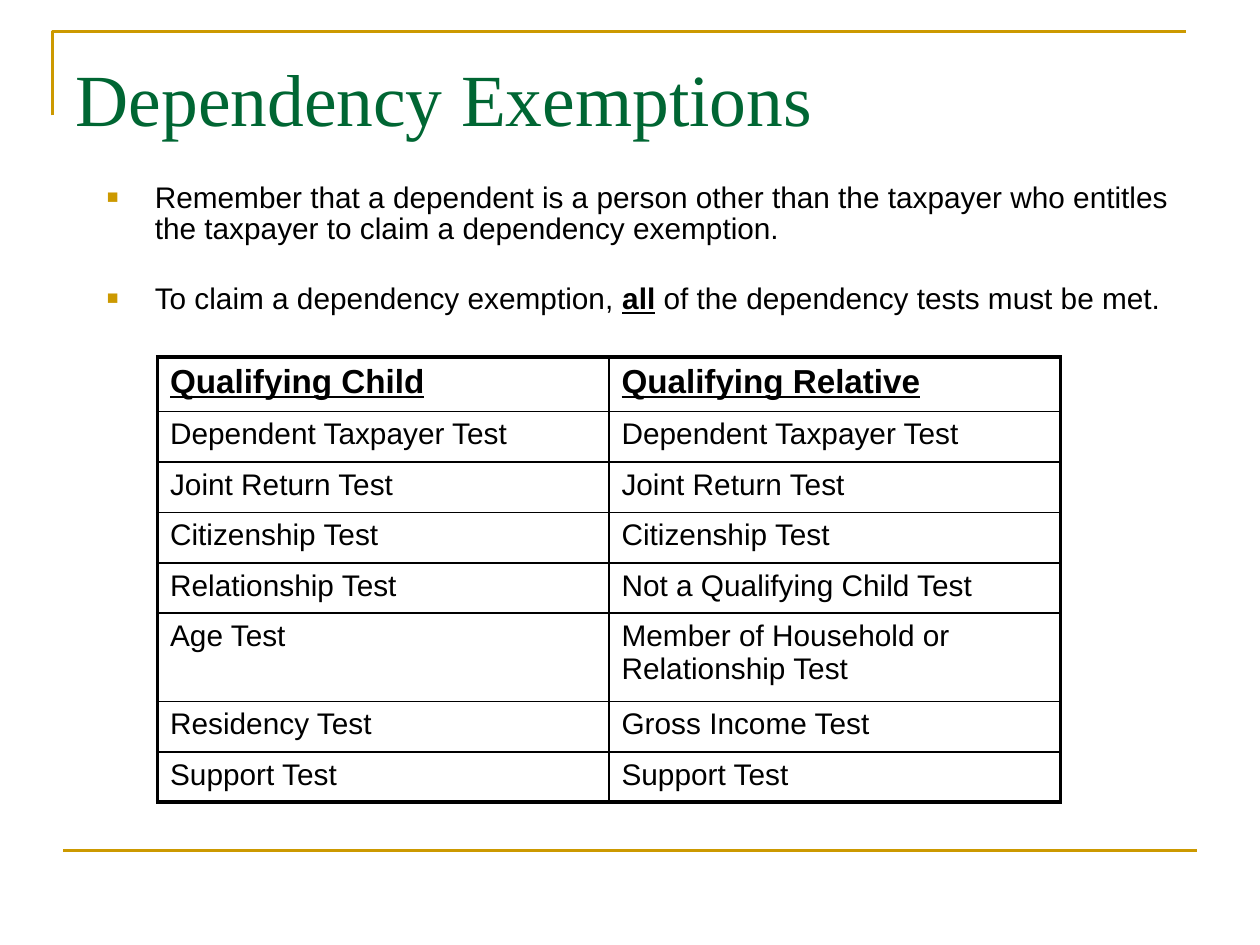
from lxml.etree import SubElement
from pptx import Presentation
from pptx.dml.color import RGBColor
from pptx.enum.shapes import MSO_CONNECTOR
from pptx.enum.text import MSO_ANCHOR
from pptx.oxml.ns import qn
from pptx.util import Inches, Pt

COLUMNS, ROWS = 120, 90  # twelve grid units to the inch
GOLD, GREEN, BLACK = "CC9900", "006633", "000000"
THICK, THIN = 2.25, 1

REMINDERS = [
    [("Remember that a dependent is a person other than the taxpayer who "
      "entitles the taxpayer to claim a dependency exemption.", False)],
    [("To claim a dependency exemption, ", False), ("all", True),
     (" of the dependency tests must be met.", False)],
]
TESTS = [
    ("Qualifying Child", "Qualifying Relative"),
    ("Dependent Taxpayer Test", "Dependent Taxpayer Test"),
    ("Joint Return Test", "Joint Return Test"),
    ("Citizenship Test", "Citizenship Test"),
    ("Relationship Test", "Not a Qualifying Child Test"),
    ("Age Test", "Member of Household or Relationship Test"),
    ("Residency Test", "Gross Income Test"),
    ("Support Test", "Support Test"),
]
TEST_HEIGHTS = [5.2, 4.8, 4.8, 4.8, 4.8, 8.4, 4.8, 4.8]


def rgb(code):
    return RGBColor.from_string(code)


def add_text(paragraph, text, size=17, font="Arial", color=BLACK, strong=False):
    """Append a run; strong means bold and underlined."""
    run = paragraph.add_run()
    run.text = text
    run.font.size, run.font.name = Pt(size), font
    run.font.color.rgb = rgb(color)
    run.font.bold = run.font.underline = strong


def add_bullet(paragraph, color, indent):
    props = paragraph._p.get_or_add_pPr()
    props.set("marL", str(indent))
    props.set("indent", str(-indent))
    SubElement(SubElement(props, qn("a:buClr")), qn("a:srgbClr"), val=color)
    SubElement(props, qn("a:buSzPct"), val="65000")
    SubElement(props, qn("a:buFont"), typeface="Arial")
    SubElement(props, qn("a:buChar"), char="■")


def set_borders(cell, **widths):
    """Draw black borders; the fill must be set afterwards."""
    props = cell._tc.get_or_add_tcPr()
    for side in "LRTB":
        border = SubElement(props, qn(f"a:ln{side}"), w=str(Pt(widths[side])))
        SubElement(SubElement(border, qn("a:solidFill")), qn("a:srgbClr"), val=BLACK)


class SlideBuilder:
    def __init__(self, deck):
        self.slide = deck.slides.add_slide(deck.slide_layouts[5])
        self.shapes = self.slide.shapes
        self.column = deck.slide_width / COLUMNS
        self.row = deck.slide_height / ROWS

    def at(self, columns, rows):
        return round(columns * self.column), round(rows * self.row)

    def style_line(self, line):
        line.color.rgb, line.width = rgb(GOLD), Pt(1.5)

    def bracket(self, *points):
        start, *others = [self.at(*point) for point in points]
        outline = self.shapes.build_freeform(*start)
        outline.add_line_segments(others, close=False)
        corner = outline.convert_to_shape()
        corner.fill.background()
        corner.shadow.inherit = False
        self.style_line(corner.line)

    def rule(self, start, end):
        footer_rule = self.shapes.add_connector(
            MSO_CONNECTOR.STRAIGHT, *self.at(*start), *self.at(*end))
        self.style_line(footer_rule.line)
        SubElement(footer_rule._element.spPr, qn("a:effectLst"))

    def title(self, text, position, size):
        heading = self.shapes.title
        heading.left, heading.top = self.at(*position)
        heading.width, heading.height = self.at(*size)
        frame = heading.text_frame
        frame.vertical_anchor = MSO_ANCHOR.TOP
        frame.margin_top = Inches(0.12)
        paragraph = frame.paragraphs[0]
        paragraph._p.get_or_add_pPr().set("algn", "l")
        add_text(paragraph, text, size=42, font="Times New Roman", color=GREEN)

    def bullets(self, items, position, size):
        frame = self.shapes.add_textbox(*self.at(*position), *self.at(*size)).text_frame
        frame.word_wrap = True
        for index, pieces in enumerate(items):
            paragraph = frame.add_paragraph() if index else frame.paragraphs[0]
            paragraph.line_spacing = 0.85
            paragraph.space_before = Pt(23 if index else 0)
            add_bullet(paragraph, GOLD, Inches(0.38))
            for text, strong in pieces:
                add_text(paragraph, text, strong=strong)

    def table(self, records, heights, position, column_width):
        last_row, last_column = len(records) - 1, len(records[0]) - 1
        size = self.at(column_width * len(records[0]), sum(heights))
        grid = self.shapes.add_table(
            len(records), len(records[0]), *self.at(*position), *size).table
        grid.first_row = grid.horz_banding = False
        for column in grid.columns:
            column.width = self.at(column_width, 0)[0]
        for r, (record, height) in enumerate(zip(records, heights)):
            grid.rows[r].height = self.at(0, height)[1]
            for c, text in enumerate(record):
                cell = grid.cell(r, c)
                add_text(cell.text_frame.paragraphs[0], text,
                         size=17 if r else 19, strong=r == 0)
                set_borders(cell,
                            L=THIN if c else THICK,
                            R=THICK if c == last_column else THIN,
                            T=THIN if r else THICK,
                            B=THICK if r == last_row else THIN)
                cell.fill.background()


def main():
    deck = Presentation()
    deck.slide_width, deck.slide_height = Inches(10), Inches(7.5)
    page = SlideBuilder(deck)
    page.bracket((5, 11), (5, 3), (113, 3))
    page.rule((6, 81), (114, 81))
    page.title("Dependency Exemptions", (6, 3.6), (108, 15))
    page.bullets(REMINDERS, (9, 17), (105, 18))
    page.table(TESTS, TEST_HEIGHTS, (15, 34), 43)
    deck.save("out.pptx")


if __name__ == "__main__":
    main()
